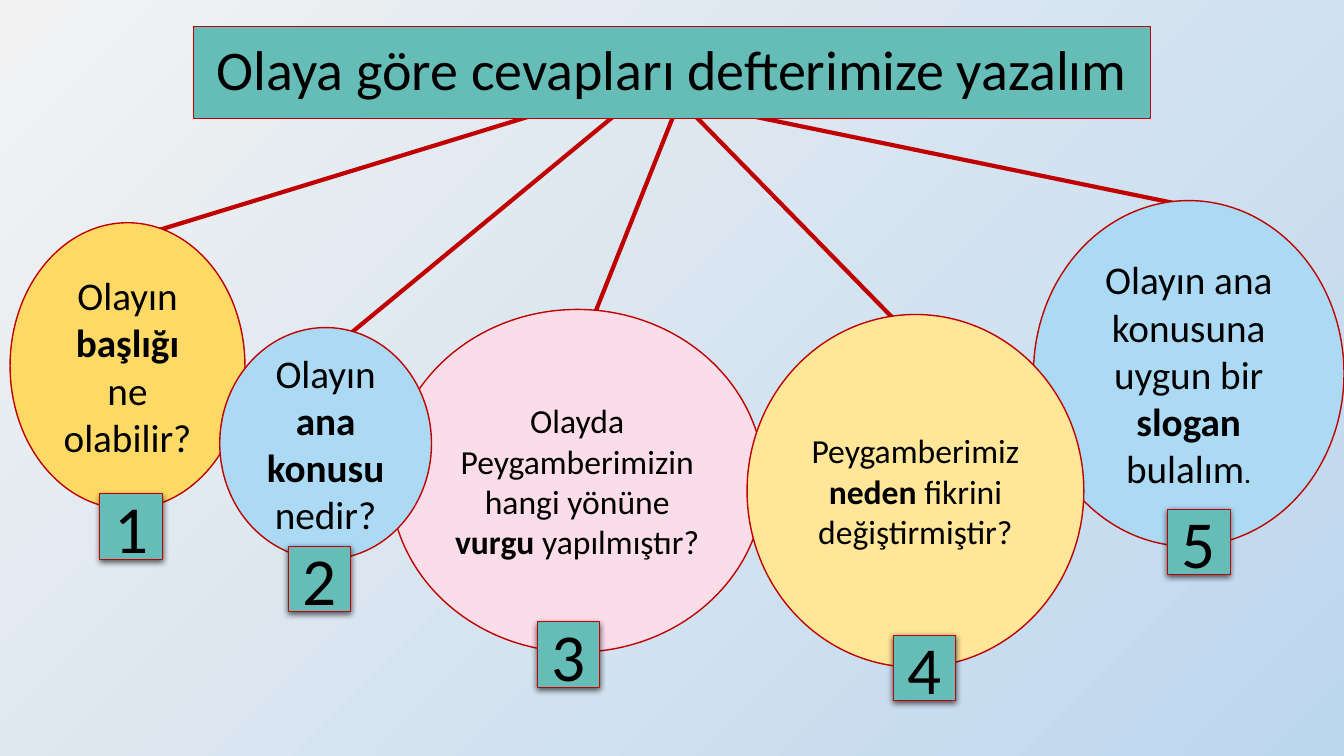
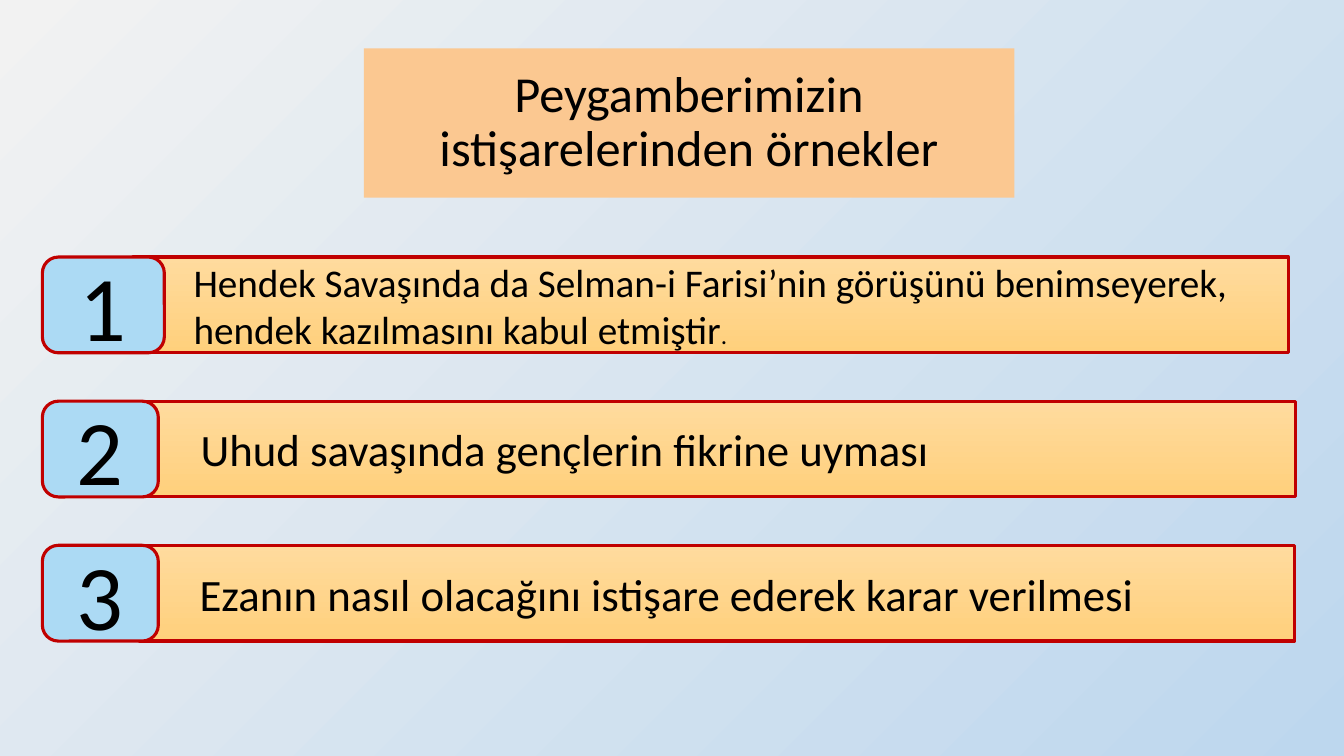
"""Build two lesson slides: questions about a story, and examples of consultation."""
from dataclasses import dataclass

from lxml.etree import SubElement
from pptx import Presentation
from pptx.dml.color import RGBColor as Rgb
from pptx.enum.shapes import MSO_CONNECTOR, MSO_SHAPE as Preset
from pptx.enum.text import MSO_ANCHOR, MSO_AUTO_SIZE, PP_ALIGN as Align
from pptx.oxml.ns import qn
from pptx.util import Inches, Pt


@dataclass(frozen=True)
class Theme:
    font: str = "Calibri"
    ink: Rgb = Rgb.from_string("000000")
    red: Rgb = Rgb.from_string("C00000")
    teal: Rgb = Rgb.from_string("66BDB7")
    peach: Rgb = Rgb.from_string("FBC891")
    gold: Rgb = Rgb.from_string("FFD966")
    sand: Rgb = Rgb.from_string("FFE699")
    pink: Rgb = Rgb.from_string("FBDDE9")
    sky: Rgb = Rgb.from_string("ACDAF4")
    page: tuple = (Rgb.from_string("F2F2F2"), Rgb.from_string("BDD7EE"))
    bar: tuple = (Rgb.from_string("FFDB9E"), Rgb.from_string("FFD07C"))
    heading: int = 40
    subheading: int = 36
    large: int = 32
    body: int = 28
    small: int = 24
    badge: int = 48
    tab: int = 66


theme = Theme()


def write(shape, text, size, align=Align.CENTER, spacing=None, indent=0.1, stop_size=None):
    frame = shape.text_frame
    frame.word_wrap = True
    frame.auto_size = MSO_AUTO_SIZE.NONE
    frame.vertical_anchor = MSO_ANCHOR.MIDDLE
    frame.margin_left = Inches(indent)
    paragraph = frame.paragraphs[0]
    paragraph.alignment = align
    paragraph.line_spacing = spacing
    pieces = [(piece, size, i % 2 == 1) for i, piece in enumerate(text.split("**"))]
    if stop_size:
        pieces.append((".", stop_size, False))
    for piece, points, bold in pieces:
        run = paragraph.add_run()
        run.text = piece
        run.font.name = theme.font
        run.font.size = Pt(points)
        run.font.bold = bold
        run.font.color.rgb = theme.ink


def paint(shape, colour, outline=None):
    shape.shadow.inherit = False
    if isinstance(colour, Rgb):
        shape.fill.solid()
        shape.fill.fore_color.rgb = colour
    else:
        shape.fill.gradient()
        shape.fill.gradient_angle = 270
        for stop, shade in zip(shape.fill.gradient_stops, colour):
            stop.color.rgb = shade
    if outline:
        shape.line.color.rgb = theme.red
        shape.line.width = Pt(outline)
    else:
        shape.line.fill.background()


prs = Presentation()
prs.slide_width, prs.slide_height = Inches(13.33), Inches(7.5)
backdrop = prs.slide_master.background.fill
backdrop.gradient()
backdrop.gradient_angle = 315
for stop, shade in zip(backdrop.gradient_stops, theme.page):
    stop.color.rgb = shade

headings = [
    ("Olaya göre cevapları defterimize yazalım", theme.heading,
     (1.92, 0.26, 9.49, 0.91), theme.teal, 0.5),
    ("Peygamberimizin istişarelerinden örnekler", theme.subheading,
     (3.61, 0.48, 6.45, 1.48), theme.peach, None),
]
for heading, size, place, colour, outline in headings:
    title = prs.slides.add_slide(prs.slide_layouts[5]).shapes.title
    title.left, title.top, title.width, title.height = map(Inches, place)
    paint(title, colour, outline)
    write(title, heading, size, spacing=0.9)

questions, examples = (slide.shapes for slide in prs.slides)

rays = [
    (5.8, 3.36, 6.87, 0.67),
    (8.86, 3.16, 6.66, 0.91),
    (3.11, 3.61, 6.66, 0.68),
    (11.72, 2.03, 6.28, 0.91),
    (1.29, 2.37, 6.54, 0.76),
]
for ends in rays:
    ray = questions.add_connector(MSO_CONNECTOR.STRAIGHT, *map(Inches, ends))
    ray.line.color.rgb = theme.red
    ray.line.width = Pt(3)
    SubElement(ray.line._get_or_add_ln(), qn("a:tailEnd"), type="triangle")
    SubElement(ray.element.spPr, qn("a:effectLst"))

bubbles = [
    ("Olayın **başlığı **ne olabilir?", theme.body, None,
     (0.1, 2.21, 2.33, 2.84), theme.gold),
    ("Olayda Peygamberimizin hangi yönüne **vurgu **yapılmıştır?", theme.small, None,
     (3.87, 3.07, 3.71, 3.4), theme.pink),
    ("Olayın ana konusuna uygun bir **slogan **bulalım", theme.body, 20,
     (10.25, 1.99, 3.08, 3.43), theme.sky),
    ("Peygamberimiz **neden** fikrini değiştirmiştir?", theme.small, None,
     (7.41, 3.12, 3.34, 3.5), theme.sand),
    ("Olayın **ana konusu **nedir?", theme.body, None,
     (2.18, 3.25, 2.1, 2.3), theme.sky),
]
for question, size, stop_size, place, colour in bubbles:
    bubble = questions.add_shape(Preset.OVAL, *map(Inches, place))
    paint(bubble, colour, 1)
    write(bubble, question, size, stop_size=stop_size)

questions.title.element.getparent().append(questions.title.element)

badge_corners = [(0.99, 4.9), (2.86, 5.42), (5.33, 6.17), (8.86, 6.3), (11.58, 5.05)]
for number, (left, top) in enumerate(badge_corners, 1):
    badge = questions.add_shape(Preset.RECTANGLE, *map(Inches, (left, top, 0.62, 0.65)))
    paint(badge, theme.teal, 0.75)
    write(badge, str(number), theme.badge)
    effects = badge.element.spPr.find(qn("a:effectLst"))
    shadow = SubElement(effects, qn("a:outerShdw"), blurRad=str(Pt(4.5)),
                        dist=str(Pt(1.5)), dir="5400000", algn="ctr", rotWithShape="0")
    shadow_colour = SubElement(shadow, qn("a:srgbClr"), val=str(theme.ink))
    SubElement(shadow_colour, qn("a:alpha"), val="63000")

consultations = [
    ("Hendek Savaşında da Selman-i Farisi’nin görüşünü benimseyerek, "
     "hendek kazılmasını kabul etmiştir", theme.body, 18, 1.32, 1.21),
    ("Uhud savaşında gençlerin fikrine uyması", theme.large, None, 1.39, 1.15),
    ("Ezanın nasıl olacağını istişare ederek karar verilmesi", theme.large, None, 1.38, 1.15),
]
for row, (example, size, stop_size, bar_left, tab_width) in enumerate(consultations):
    top = 2.55 + 1.43 * row
    bar = examples.add_shape(Preset.RECTANGLE, *map(Inches, (bar_left, top, 11.46, 0.95)))
    paint(bar, theme.bar, 2.25)
    write(bar, example, size, align=Align.LEFT, indent=0.6, stop_size=stop_size)
    tab = examples.add_shape(Preset.ROUNDED_RECTANGLE,
                             *map(Inches, (0.42, top, tab_width, 0.95)))
    paint(tab, theme.sky, 2.25)
    write(tab, str(row + 1), theme.tab)

prs.save("out.pptx")
